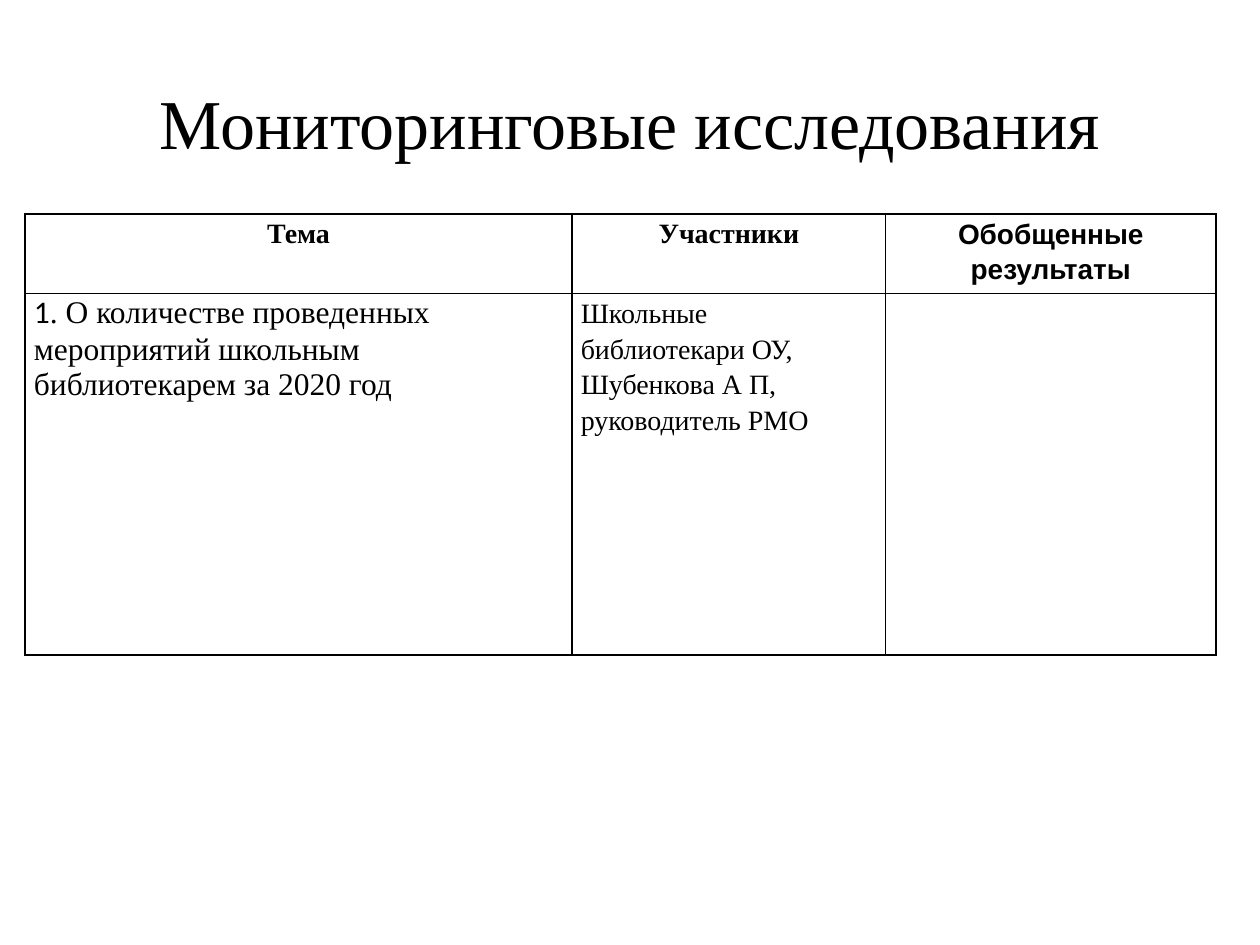
from lxml import etree
from pptx import Presentation, util as u
from pptx.dml.color import RGBColor
from pptx.enum import text
from pptx.oxml.ns import qn

BLACK = RGBColor(0x00, 0x00, 0x00)
SERIF, SANS, BODY = "Times New Roman", "Arial", "Calibri"
SLIDE_W, SLIDE_H = u.Inches(10), u.Inches(7.5)
COLS, ROWS = (4.34, 2.49, 2.62), (0.63, 2.87)
CENTER, LEFT = text.PP_ALIGN.CENTER, text.PP_ALIGN.LEFT

HEADER = [("Тема", SERIF), ("Участники", SERIF), ("Обобщенные результаты", SANS)]
TOPIC = [("1", BODY),
         (". О количестве проведенных мероприятий школьным библиотекарем за 2020 год", SERIF)]
PARTICIPANTS = ["Школьные библиотекари ОУ,", "Шубенкова А П, руководитель РМО"]


def set_attrs(obj, values):
    for name, value in values.items():
        setattr(obj, name, value)


def write(tf, paragraphs, size, align=LEFT, spacing=1.0, bold=False):
    """Fill a text frame; each paragraph is a list of (text, font) runs."""
    for i, runs in enumerate(paragraphs):
        p = tf.paragraphs[0] if i == 0 else tf.add_paragraph()
        set_attrs(p, {"alignment": align, "line_spacing": spacing})
        for words, font in runs:
            r = p.add_run()
            r.text = words
            set_attrs(r.font, {"name": font, "size": u.Pt(size), "bold": bold})
            r.font.color.rgb = BLACK


def style_cell(cell):
    """Clear fill, narrow margins and a thin black border on every side."""
    side = u.Inches(0.07)
    set_attrs(cell, {"margin_left": side, "margin_right": side,
                     "margin_top": 0, "margin_bottom": 0})
    tc_pr = cell._tc.get_or_add_tcPr()
    for edge in ("a:lnL", "a:lnR", "a:lnT", "a:lnB"):
        ln = etree.SubElement(tc_pr, qn(edge), w=str(u.Pt(1)))
        fill = etree.SubElement(ln, qn("a:solidFill"))
        etree.SubElement(fill, qn("a:srgbClr"), val=str(BLACK))
    cell.fill.background()


def add_title(s, x, y, w, h):
    tf = s.shapes.add_textbox(x, y, w, h).text_frame
    set_attrs(tf, {"word_wrap": True, "vertical_anchor": text.MSO_ANCHOR.MIDDLE})
    write(tf, [[("Мониторинговые исследования", SERIF)]], 40, CENTER)


def add_research_table(s, x, y, w, h):
    table = s.shapes.add_table(len(ROWS), len(COLS), x, y, w, h).table
    set_attrs(table, {"first_row": False, "horz_banding": False})
    for col, share in zip(table.columns, COLS):
        col.width = int(w * share / sum(COLS))
    for row, share in zip(table.rows, ROWS):
        row.height = int(h * share / sum(ROWS))
    for cell in table.iter_cells():
        style_cell(cell)

    # Header row
    for i, run in enumerate(HEADER):
        write(table.cell(0, i).text_frame, [[run]], 16, CENTER, 1.15, True)

    # Research row, results left open
    write(table.cell(1, 0).text_frame, [TOPIC], 18)
    write(table.cell(1, 1).text_frame, [[(line, SERIF)] for line in PARTICIPANTS],
          16, spacing=1.15)


def main():
    prs = Presentation()
    set_attrs(prs, {"slide_width": SLIDE_W, "slide_height": SLIDE_H})
    s = prs.slides.add_slide(prs.slide_layouts[6])
    add_title(s, int(SLIDE_W * 0.05), int(SLIDE_H * 0.045),
              int(SLIDE_W * 0.9), u.Inches(1.25))
    add_research_table(s, int(SLIDE_W * 0.02), u.Inches(1.7),
                       u.Inches(sum(COLS)), u.Inches(sum(ROWS)))
    prs.save("out.pptx")


if __name__ == "__main__":
    main()
